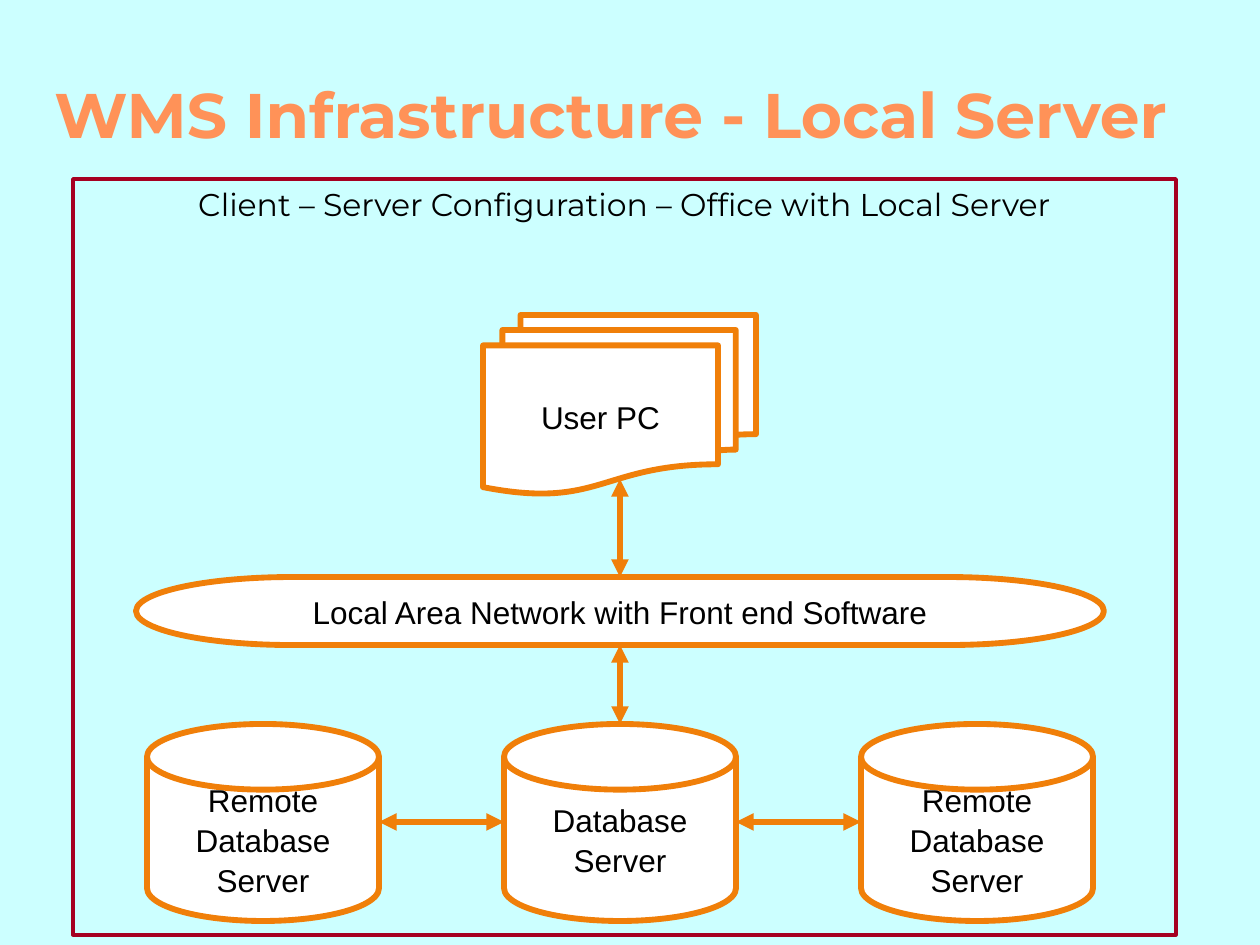
"""Build the WMS local server infrastructure slide."""
from dataclasses import dataclass

from lxml.etree import SubElement
from pptx import Presentation
from pptx.dml.color import RGBColor
from pptx.enum.shapes import MSO_CONNECTOR, MSO_SHAPE
from pptx.enum.text import MSO_ANCHOR, PP_ALIGN
from pptx.oxml.ns import qn
from pptx.util import Pt

PX = 914400 / 126


@dataclass(frozen=True)
class Theme:
    background: str = "CCFFFF"
    heading: str = "FF9258"
    text: str = "000000"
    node: str = "FFFFFF"
    outline: str = "F07F09"
    frame: str = "A50021"
    heading_font: str = "Montserrat"
    node_font: str = "Arial"
    heading_size: int = 36
    body_size: int = 18
    outline_width: float = 3.35
    frame_width: int = 2


def px(*lengths):
    return [round(length * PX) for length in lengths]


class Diagram:
    def __init__(self, slide, theme):
        self.slide = slide
        self.theme = theme
        background = slide.background.fill
        background.solid()
        background.fore_color.rgb = RGBColor.from_string(theme.background)

    def add_text(self, frame, lines, font, size, color, bold=False,
                 align=PP_ALIGN.CENTER, anchor=MSO_ANCHOR.MIDDLE, spacing=None):
        frame.word_wrap = True
        frame.vertical_anchor = anchor
        for index, line in enumerate(lines):
            paragraph = frame.add_paragraph() if index else frame.paragraphs[0]
            paragraph.alignment = align
            paragraph.line_spacing = spacing
            run = paragraph.add_run()
            run.text = line
            run.font.name = font
            run.font.size = Pt(size)
            run.font.bold = bold
            run.font.color.rgb = RGBColor.from_string(color)

    def title(self, box, line):
        heading = self.slide.shapes.add_textbox(*px(*box))
        self.add_text(heading.text_frame, [line], self.theme.heading_font,
                      self.theme.heading_size, self.theme.heading, bold=True,
                      align=PP_ALIGN.LEFT, anchor=MSO_ANCHOR.BOTTOM)

    def outlined(self, kind, box, color, width):
        shape = self.slide.shapes.add_shape(kind, *px(*box))
        shape.shadow.inherit = False
        shape.line.color.rgb = RGBColor.from_string(color)
        shape.line.width = Pt(width)
        return shape

    def node(self, kind, box, lines):
        theme = self.theme
        shape = self.outlined(kind, box, theme.outline, theme.outline_width)
        shape.fill.solid()
        shape.fill.fore_color.rgb = RGBColor.from_string(theme.node)
        self.add_text(shape.text_frame, lines, theme.node_font, theme.body_size,
                      theme.text, spacing=1.05)
        return shape

    def frame(self, box, caption):
        theme = self.theme
        shape = self.outlined(MSO_SHAPE.RECTANGLE, box, theme.frame, theme.frame_width)
        shape.fill.background()
        self.add_text(shape.text_frame, [caption], theme.heading_font,
                      theme.body_size, theme.text, anchor=MSO_ANCHOR.TOP)

    def link(self, start, end):
        connector = self.slide.shapes.add_connector(
            MSO_CONNECTOR.STRAIGHT, *px(*start, *end))
        connector.line.color.rgb = RGBColor.from_string(self.theme.outline)
        connector.line.width = Pt(self.theme.outline_width)
        outline = connector.line._get_or_add_ln()
        for tip in ("a:headEnd", "a:tailEnd"):
            SubElement(outline, qn(tip), type="triangle")
        SubElement(connector._element.spPr, qn("a:effectLst"))
        return connector


def main():
    presentation = Presentation()
    presentation.slide_width, presentation.slide_height = px(1260, 945)
    slide = presentation.slides.add_slide(presentation.slide_layouts[6])
    diagram = Diagram(slide, Theme())
    diagram.title((42, 0, 1218, 157), "WMS Infrastructure - Local Server")

    server_left, server_top, server_width, server_height = 147, 724, 232, 197
    server_pitch = 357
    network_top, network_height = 577, 68
    center = server_left + server_pitch + server_width // 2
    remote = ["Remote", "Database Server"]
    for column, lines in enumerate((remote, ["Database Server"], remote)):
        diagram.node(MSO_SHAPE.FLOWCHART_MAGNETIC_DISK,
                     (server_left + column * server_pitch, server_top,
                      server_width, server_height), lines)
    network = diagram.node(MSO_SHAPE.FLOWCHART_TERMINATOR,
                           (136, network_top, 968, network_height),
                           ["Local Area Network with Front end Software"])
    diagram.node(MSO_SHAPE.FLOWCHART_MULTIDOCUMENT, (483, 315, 273, 179), ["User PC"])

    server_link = diagram.link((center, network_top + network_height), (center, server_top))
    server_link.begin_connect(network, 2)
    user_link = diagram.link((center, 479), (center, network_top))
    user_link.end_connect(network, 0)
    link_y = server_top + server_height // 2
    for column in range(2):
        left = server_left + column * server_pitch
        diagram.link((left + server_pitch, link_y), (left + server_width, link_y))

    diagram.frame((73, 179, 1103, 756),
                  "Client – Server Configuration – Office with Local Server")
    presentation.save("out.pptx")


if __name__ == "__main__":
    main()
